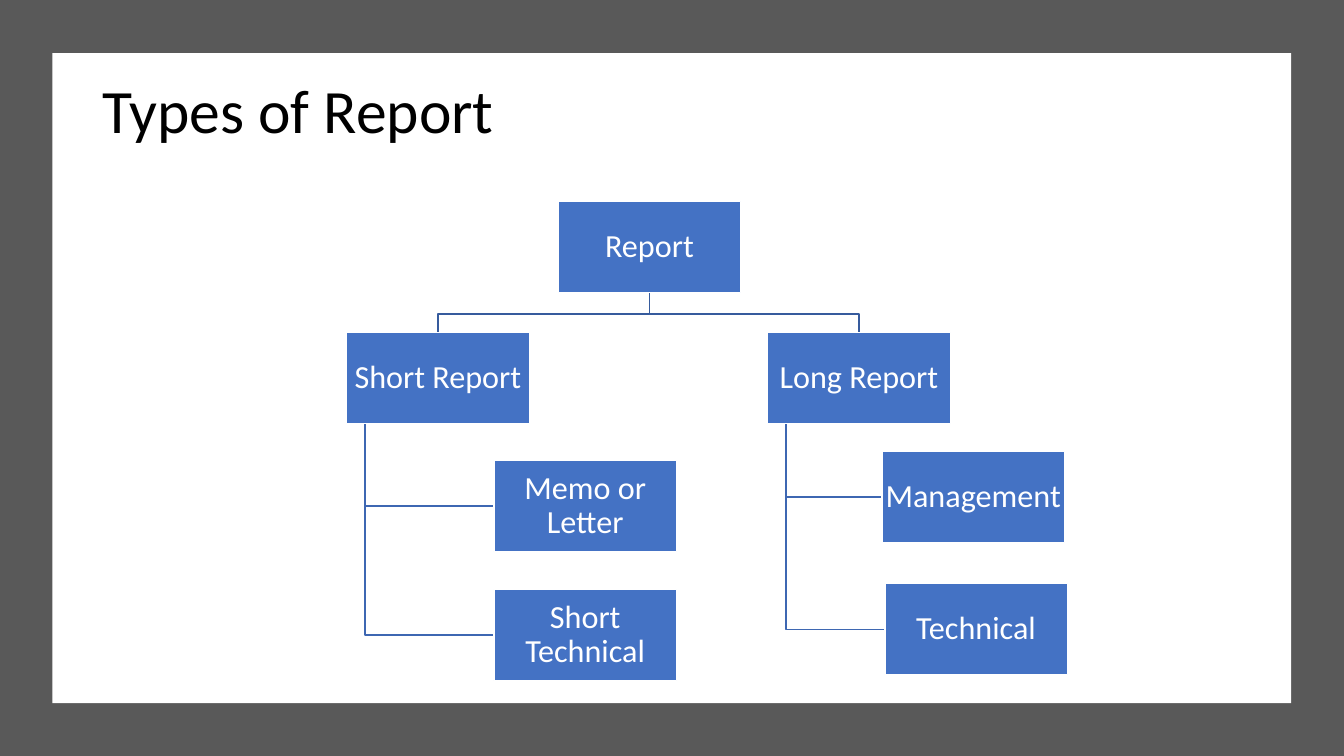
from dataclasses import dataclass

from pptx import Presentation, util as u
from pptx.dml.color import RGBColor
from pptx.enum import shapes, text


@dataclass(frozen=True)
class Theme:
    font: str = "Calibri"
    title_size: int = 44
    box_size: int = 23
    black: str = "000000"
    white: str = "FFFFFF"
    frame: str = "595959"
    box: str = "4472C4"
    trunk: str = "365B9D"
    branch: str = "3E67B2"


THEME = Theme()
WIDE, HIGH = 33.87, 19.05
BOX_W, BOX_H = 4.6, 2.29
STEM = 0.54
INDENT = BOX_W / 10

ROOT = ("Report", 14.07, 5.08)
GROUPS = [
    (("Short Report", 8.74, 8.38),
     [("Memo or Letter", 12.45, 11.61), ("Short Technical", 12.45, 14.86)]),
    (("Long Report", 19.35, 8.38),
     [("Management", 22.23, 11.38), ("Technical", 22.3, 14.71)]),
]


def color(code):
    return RGBColor.from_string(code)


def style(frame, size, tint, align):
    frame.vertical_anchor = text.MSO_ANCHOR.MIDDLE
    frame.word_wrap = True
    for para in frame.paragraphs:
        para.alignment = align
        para.line_spacing = 0.9
        for run in para.runs:
            run.font.name = THEME.font
            run.font.size = u.Pt(size)
            run.font.color.rgb = color(tint)


def add_rect(slide, left, top, width, height, fill):
    rect = slide.shapes.add_shape(
        shapes.MSO_SHAPE.RECTANGLE,
        u.Cm(left), u.Cm(top), u.Cm(width), u.Cm(height))
    rect.shadow.inherit = False
    rect.fill.solid()
    rect.fill.fore_color.rgb = color(fill)
    rect.line.fill.background()
    return rect


def add_title(slide, words, panel):
    """Fill the title and lift it above the white panel."""
    title = slide.shapes.title
    title.left, title.top = u.Cm(2.33), u.Cm(1.01)
    title.width, title.height = u.Cm(29.21), u.Cm(3.68)
    title.text_frame.text = words
    style(title.text_frame, THEME.title_size, THEME.black, text.PP_ALIGN.LEFT)
    panel.element.addnext(title.element)


def add_box(slide, node):
    label, left, top = node
    box = add_rect(slide, left, top, BOX_W, BOX_H, THEME.box)
    box.line.color.rgb = color(THEME.white)
    box.line.width = u.Pt(1)
    frame = box.text_frame
    frame.margin_left = frame.margin_right = u.Cm(0.05)
    frame.margin_top = frame.margin_bottom = u.Cm(0.05)
    frame.text = label
    style(frame, THEME.box_size, THEME.white, text.PP_ALIGN.CENTER)


def add_path(slide, points, tint):
    start, *rest = [(u.Cm(x), u.Cm(y)) for x, y in points]
    pen = slide.shapes.build_freeform(*start)
    pen.add_line_segments(rest, close=False)
    line = pen.convert_to_shape()
    line.shadow.inherit = False
    line.fill.background()
    line.line.color.rgb = color(tint)
    line.line.width = u.Pt(1)


def add_trunk(slide, upper, lower):
    """Link two boxes from bottom centre to top centre."""
    (_, left, top), (_, end, base) = upper, lower
    start_x, end_x = left + BOX_W / 2, end + BOX_W / 2
    foot = top + BOX_H
    add_path(slide, [(start_x, foot), (start_x, foot + STEM),
                     (end_x, foot + STEM), (end_x, base)], THEME.trunk)


def add_branch(slide, upper, lower):
    """Link a box's foot to the left side of a box below it."""
    (_, left, top), (_, end, base) = upper, lower
    x, y = left + INDENT, base + BOX_H / 2
    add_path(slide, [(x, top + BOX_H), (x, y), (end, y)], THEME.branch)


def add_tree(slide):
    for head, leaves in GROUPS:
        add_trunk(slide, ROOT, head)
        for leaf in leaves:
            add_branch(slide, head, leaf)
    add_box(slide, ROOT)
    for head, leaves in GROUPS:
        for node in [head, *leaves]:
            add_box(slide, node)


def main():
    deck = Presentation()
    deck.slide_width, deck.slide_height = u.Cm(WIDE), u.Cm(HIGH)
    slide = deck.slides.add_slide(deck.slide_layouts[5])
    add_rect(slide, 0, 0, WIDE, HIGH, THEME.frame)
    panel = add_rect(slide, 1.32, 1.34, 31.22, 16.38, THEME.white)
    add_title(slide, "Types of Report", panel)
    add_tree(slide)
    deck.save("out.pptx")


if __name__ == "__main__":
    main()
